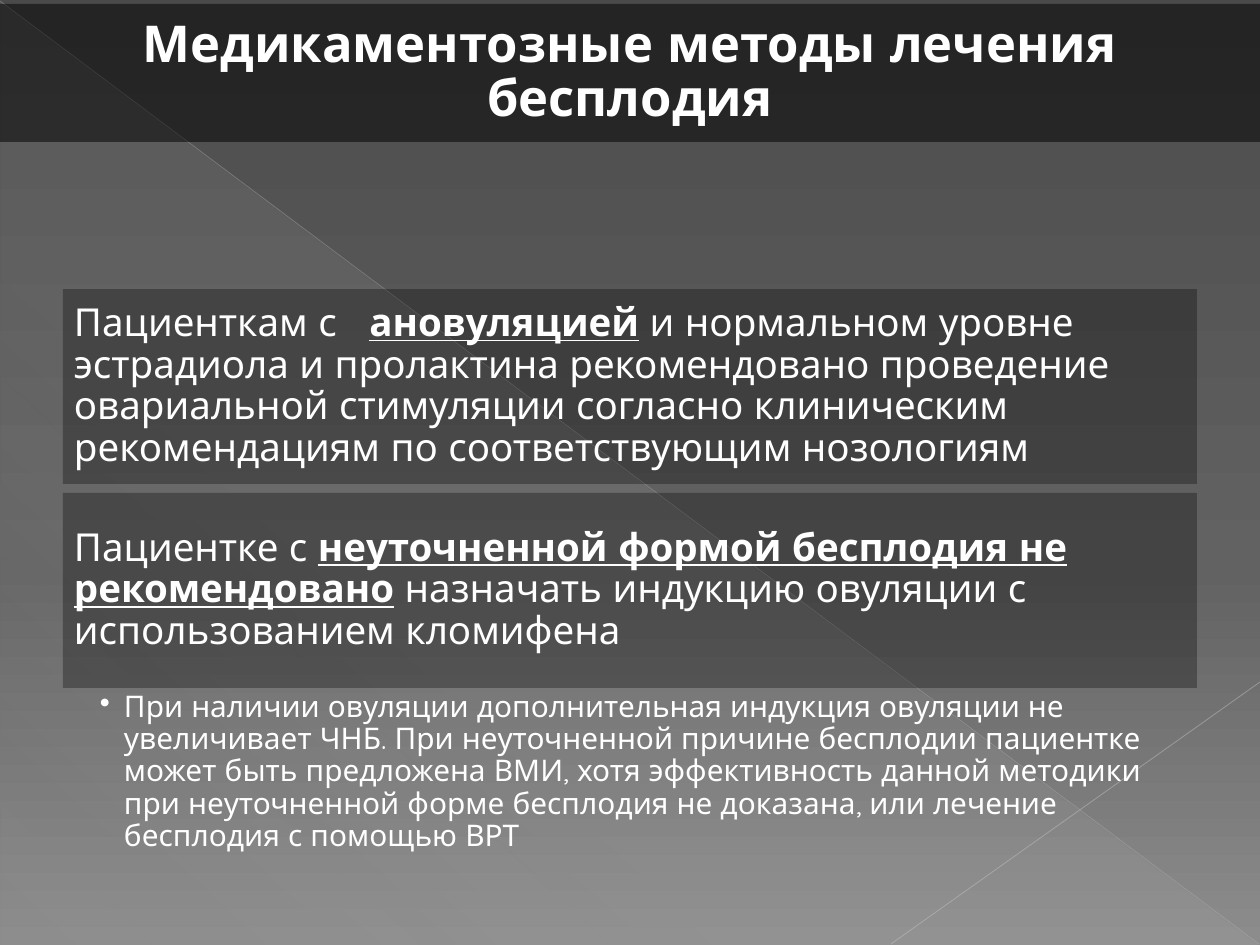
from dataclasses import dataclass

from lxml.etree import SubElement as Sub
from pptx import Presentation
from pptx.dml.color import RGBColor as Rgb
from pptx.enum.shapes import MSO_CONNECTOR as Link, MSO_SHAPE as Form
from pptx.enum.text import MSO_ANCHOR as Anchor, PP_ALIGN as Align
from pptx.oxml.ns import qn
from pptx.util import Pt


@dataclass(frozen=True)
class Theme:
    """Colours, font and type sizes of the slide."""
    font: str = "Quicksand"
    text: str = "FFFFFF"
    panel: str = "000000"
    back: tuple = ((0, "4A4A4A", 100), (60, "626262", 100), (100, "8C8C8C", 100))
    veil: tuple = ((0, "D2D2D2", 10), (70, "D2D2D2", 8), (100, "D2D2D2", 1))
    title: int = 29
    body: int = 22
    note: int = 17


LOOK = Theme()
WIDE, HIGH = 1260, 945


def px(num):
    """Turn pixels into EMU."""
    return round(num * 914400 / 126)


def fade(node, part):
    """Give a colour node an opacity in percent."""
    Sub(node, qn("a:alpha"), val=str(part * 1000))


def blend(fill, root, stops, angle):
    """Fill with a linear gradient of (place, colour, opacity) stops."""
    fill.gradient()
    grad = root.find(".//" + qn("a:gradFill"))
    grad.find(qn("a:lin")).set("ang", str(angle * 60000))
    group = grad.find(qn("a:gsLst"))
    for old in list(group):
        group.remove(old)
    for place, color, part in stops:
        stop = Sub(group, qn("a:gs"), pos=str(place * 1000))
        fade(Sub(stop, qn("a:srgbClr"), val=color), part)


def add_form(slide, kind, box):
    """Add a preset shape with no shadow or outline."""
    shape = slide.shapes.add_shape(kind, *map(px, box))
    shape.shadow.inherit = False
    shape.line.fill.background()
    return shape


def add_ray(slide, ends, color, width, part):
    """Add a thin translucent line."""
    ray = slide.shapes.add_connector(Link.STRAIGHT, *map(px, ends))
    ray.line.width = Pt(width)
    ray.line.color.rgb = Rgb.from_string(color)
    fade(ray.element.find(".//" + qn("a:srgbClr")), part)
    Sub(ray.element.spPr, qn("a:effectLst"))


def set_frame(shape, pads, size, align=Align.LEFT, anchor=Anchor.MIDDLE):
    """Set up the text frame and return its paragraph."""
    frame = shape.text_frame
    frame.word_wrap = True
    frame.vertical_anchor = anchor
    (frame.margin_left, frame.margin_top,
     frame.margin_right, frame.margin_bottom) = map(px, pads)
    para = frame.paragraphs[0]
    para.alignment = align
    para.line_spacing = 0.9
    para.font.name = LOOK.font
    para.font.size = Pt(size)
    para.font.color.rgb = Rgb.from_string(LOOK.text)
    return para


def add_panel(slide, box, part, pad, size, align=Align.LEFT):
    """Add a translucent dark panel and return its paragraph."""
    shape = add_form(slide, Form.RECTANGLE, box)
    shape.fill.solid()
    shape.fill.fore_color.rgb = Rgb.from_string(LOOK.panel)
    fade(shape.element.find(".//" + qn("a:srgbClr")), part)
    return set_frame(shape, [pad] * 4, size, align)


def add_back(slide, box):
    """Draw the gradient background, the veil and the two rays."""
    left, top, wide, high = box
    blend(slide.background.fill, slide.element, LOOK.back, 90)
    veil = add_form(slide, Form.RIGHT_TRIANGLE, (left + 1, top + 2, wide - 2, high - 2))
    blend(veil.fill, veil.element, LOOK.veil, 133)
    right, base = left + wide, top + high - 1
    add_ray(slide, (left, top + 1, right - 1, base), "BFBFBF", 0.39, 35)
    add_ray(slide, (right, top + 682, right - 369, base), "C6C6C6", 0.47, 45)


def add_title(slide, box, words):
    """Draw the title band."""
    para = add_panel(slide, box, 50, 15, LOOK.title, Align.CENTER)
    para.font.bold = True
    para.add_run().text = words


def add_advice(slide, box, start, key, rest, gap=0):
    """Draw an advice panel with a key phrase and a gap before it in points."""
    para = add_panel(slide, box, 30, 11, LOOK.body)
    para.add_run().text = start
    space = para.add_run()
    space.text = " "
    if gap:
        space.font._element.set("spc", str(round(gap * 100)))
    mark = para.add_run()
    mark.text = key
    mark.font.bold = mark.font.underline = True
    para.add_run().text = rest


def add_note(slide, box, words):
    """Draw the bulleted note."""
    shape = slide.shapes.add_textbox(*map(px, box))
    para = set_frame(shape, (37, 4, 21, 4), LOOK.note, anchor=Anchor.TOP)
    para.level = 1
    para.add_run().text = words
    props = para._p.get_or_add_pPr()
    props.set("marL", str(px(24)))
    props.set("indent", str(-px(24)))
    mark = Sub(props, qn("a:buChar"), char="•")
    props.find(qn("a:defRPr")).addprevious(mark)


def add_body(slide, box):
    """Stack two advice panels and the note."""
    left, top, wide, high = box
    tall, gap = 195, 9
    add_advice(slide, (left, top, wide, tall), "Пациенткам с", "ановуляцией",
               " и нормальном уровне эстрадиола и пролактина рекомендовано проведение "
               "овариальной стимуляции согласно клиническим рекомендациям "
               "по соответствующим нозологиям", gap=12.5)
    add_advice(slide, (left, top + tall + gap, wide, tall), "Пациентке с",
               "неуточненной формой бесплодия не рекомендовано",
               " назначать индукцию овуляции с использованием кломифена")
    used = 2 * tall + gap
    add_note(slide, (left, top + used, wide, high - used),
             "При наличии овуляции дополнительная индукция овуляции не увеличивает ЧНБ. "
             "При неуточненной причине бесплодии пациентке может быть предложена ВМИ, "
             "хотя эффективность данной методики при неуточненной форме бесплодия "
             "не доказана, или лечение бесплодия с помощью ВРТ")


def main():
    """Build and save the slide."""
    deck = Presentation()
    deck.slide_width, deck.slide_height = px(WIDE), px(HIGH)
    slide = deck.slides.add_slide(deck.slide_layouts[6])
    add_back(slide, (0, 0, WIDE, HIGH))
    add_body(slide, (63, 289, 1134, 572))
    add_title(slide, (0, 4, WIDE, 138), "Медикаментозные методы лечения бесплодия")
    deck.save("out.pptx")


if __name__ == "__main__":
    main()
